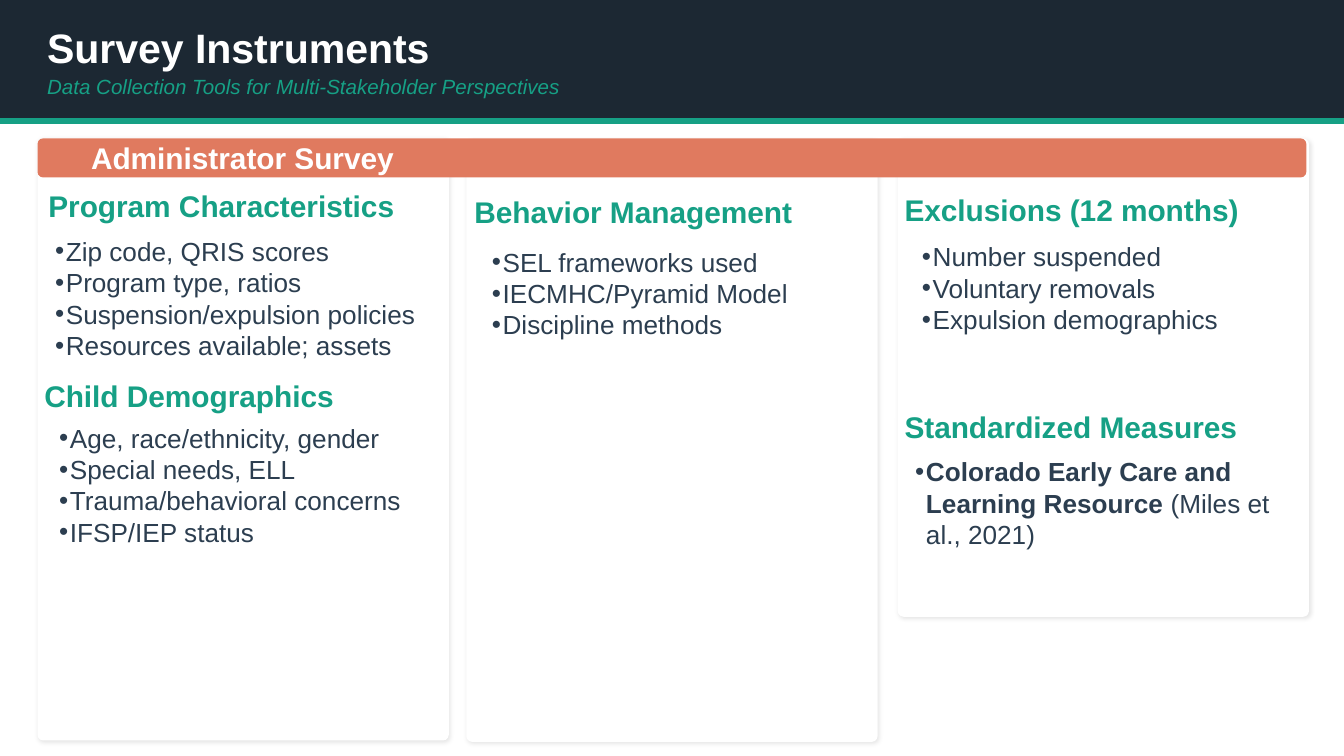
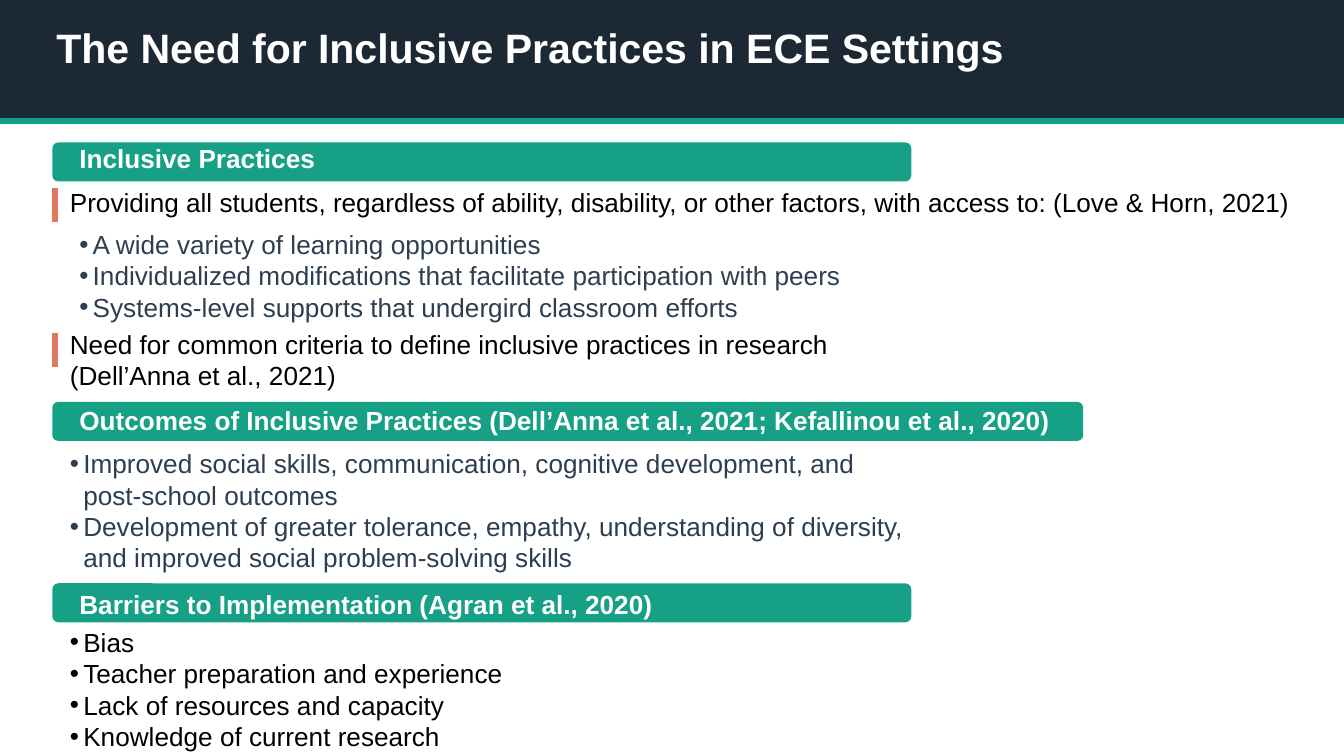
"""Builds two slides on survey instruments and inclusive practices."""
from lxml.etree import SubElement
from pptx import Presentation
from pptx.dml.color import RGBColor
from pptx.enum.shapes import MSO_CONNECTOR as Connector, MSO_SHAPE as Shape
from pptx.enum.text import MSO_ANCHOR as Anchor, PP_ALIGN as Align
from pptx.oxml.ns import qn
from pptx.util import Pt

EMU_PER_PX = 9144
WIDTH = 1000
FONT = "Arial"
WHITE, BLACK = "FFFFFF", "000000"
NAVY, SLATE = "1C2833", "2C3E50"
TEAL, CORAL = "16A085", "E07A5F"


def px(*lengths):
    return [length * EMU_PER_PX for length in lengths]


def color(hex_value):
    return RGBColor.from_string(hex_value)


def add_block(page, area, fill, radius=None):
    kind = Shape.RECTANGLE if radius is None else Shape.ROUNDED_RECTANGLE
    block = page.shapes.add_shape(kind, *px(*area))
    if radius is not None:
        block.adjustments[0] = radius
    block.shadow.inherit = False
    block.fill.solid()
    block.fill.fore_color.rgb = color(fill)
    block.line.fill.background()
    return block


def add_card(page, left, top, height):
    card = add_block(page, (left, top, 306, height), WHITE, 0.014)
    effects = card._element.spPr.find(qn("a:effectLst"))
    shadow = SubElement(effects, qn("a:outerShdw"), blurRad=str(Pt(2.2)),
                        dist=str(Pt(1.1)), dir=str(45 * 60000), algn="bl", rotWithShape="0")
    tint = SubElement(shadow, qn("a:srgbClr"), val=BLACK)
    SubElement(tint, qn("a:alpha"), val="10000")


def add_line(page, start, end, stroke):
    line = page.shapes.add_connector(Connector.STRAIGHT, *px(*start, *end))
    line.line.color.rgb = color(stroke)
    line.line.width = Pt(3)
    SubElement(line._element.spPr, qn("a:effectLst"))


def set_bullet(para, indent):
    properties = para._p.get_or_add_pPr()
    properties.set("marL", str(indent * EMU_PER_PX))
    properties.set("indent", str(-indent * EMU_PER_PX))
    SubElement(properties, qn("a:buFont"), typeface=FONT)
    SubElement(properties, qn("a:buChar"), char="•")


def add_text(page, area, *paragraphs, size=14, fill=BLACK, bold=False, italic=False,
             align=Align.LEFT, inset=0, bottom=0, before=0, after=0, bullet=0):
    """Add a text box; a paragraph is a string or a list of (text, bold) spans."""
    box = page.shapes.add_textbox(*px(*area))
    frame = box.text_frame
    frame.word_wrap = True
    frame.vertical_anchor = Anchor.TOP
    frame.margin_left, frame.margin_bottom = px(inset, bottom)
    frame.margin_top = frame.margin_right = 0
    for index, spans in enumerate(paragraphs):
        para = frame.add_paragraph() if index else frame.paragraphs[0]
        para.alignment = align
        if before:
            para.space_before = Pt(before)
        if after:
            para.space_after = Pt(after)
        if bullet:
            set_bullet(para, bullet)
        if isinstance(spans, str):
            spans = [(spans, bold)]
        for text, is_bold in spans:
            span = para.add_run()
            span.text = text
            span.font.name = FONT
            span.font.size = Pt(size)
            span.font.bold = is_bold
            span.font.italic = italic
            span.font.color.rgb = color(fill)


def add_header(page, left, width, title, subtitle=None):
    add_block(page, (0, 0, WIDTH, 92), NAVY)
    add_line(page, (0, 90), (WIDTH, 90), TEAL)
    add_text(page, (left, 17, width, 35), title, size=22, fill=WHITE, bold=True)
    if subtitle:
        add_text(page, (left, 55, width, 17), subtitle, size=11, fill=TEAL,
                 italic=True, before=2)


def add_topic(page, heading_at, list_at, heading, *items):
    add_text(page, (*heading_at, 295, 14), heading, size=16, fill=TEAL, bold=True,
             bottom=1, after=2)
    add_text(page, (*list_at, 289, 31), *items, fill=SLATE, inset=8, bullet=8)


def add_section(page, top, width, text_top, heading):
    add_block(page, (39, top, width, 29), TEAL, 0.15)
    add_text(page, (59, text_top, 918, 17), heading, fill=WHITE, bold=True)


def add_statement(page, bar_top, text_top, width, text):
    add_line(page, (41, bar_top), (41, bar_top + 25), CORAL)
    add_text(page, (52, text_top, width, 15), text)


def build_survey(page):
    for left, top, height in ((347, 104, 448), (668, 103, 356)):
        add_card(page, left, top, height)
    add_header(page, 35, 949, "Survey Instruments",
               "Data Collection Tools for Multi-Stakeholder Perspectives")
    add_card(page, 28, 103, 448)
    add_block(page, (28, 103, 944, 29), CORAL, 0.141)
    add_text(page, (33, 104, 295, 16), "Administrator Survey", size=16, fill=WHITE,
             bold=True, align=Align.CENTER)
    add_topic(page, (36, 140), (33, 175), "Program Characteristics",
              "Zip code, QRIS scores", "Program type, ratios",
              "Suspension/expulsion policies", "Resources available; assets")
    add_topic(page, (33, 281), (36, 314), "Child Demographics",
              "Age, race/ethnicity, gender", "Special needs, ELL",
              "Trauma/behavioral concerns", "IFSP/IEP status")
    add_topic(page, (353, 144), (358, 183), "Behavior Management",
              "SEL frameworks used", "IECMHC/Pyramid Model", "Discipline methods")
    add_topic(page, (673, 143), (678, 179), "Exclusions (12 months)",
              "Number suspended", "Voluntary removals", "Expulsion demographics")
    add_topic(page, (673, 304), (673, 339), "Standardized Measures",
              [("Colorado Early Care and Learning Resource", True),
               (" (Miles et al., 2021)", False)])


def build_practices(page):
    add_header(page, 42, 935, "The Need for Inclusive Practices in ECE Settings")
    add_section(page, 106, 639, 106, "Inclusive Practices")
    add_statement(page, 140, 139, 914,
                  "Providing all students, regardless of ability, disability, or other "
                  "factors, with access to: (Love & Horn, 2021)")
    add_text(page, (59, 170, 914, 15),
             "A wide variety of learning opportunities",
             "Individualized modifications that facilitate participation with peers",
             "Systems-level supports that undergird classroom efforts",
             fill=SLATE, bullet=10)
    add_statement(page, 248, 244, 624,
                  "Need for common criteria to define inclusive practices in research "
                  "(Dell’Anna et al., 2021)")
    add_text(page, (52, 333, 624, 48),
             "Improved social skills, communication, cognitive development, and "
             "post-school outcomes",
             "Development of greater tolerance, empathy, understanding of diversity, "
             "and improved social problem-solving skills",
             fill=SLATE, bullet=10)
    add_section(page, 299, 767, 301, "Outcomes of Inclusive Practices "
                "(Dell’Anna et al., 2021; Kefallinou et al., 2020)")
    add_text(page, (52, 466, 914, 54),
             "Bias", "Teacher preparation and experience",
             "Lack of resources and capacity", "Knowledge of current research",
             bullet=10)
    add_section(page, 434, 639, 438, "Barriers to Implementation (Agran et al., 2020)")


def main():
    deck = Presentation()
    deck.slide_width, = px(WIDTH)
    deck.slide_height = deck.slide_width * 9 // 16
    for build in (build_survey, build_practices):
        build(deck.slides.add_slide(deck.slide_layouts[6]))
    deck.save("out.pptx")


if __name__ == "__main__":
    main()
